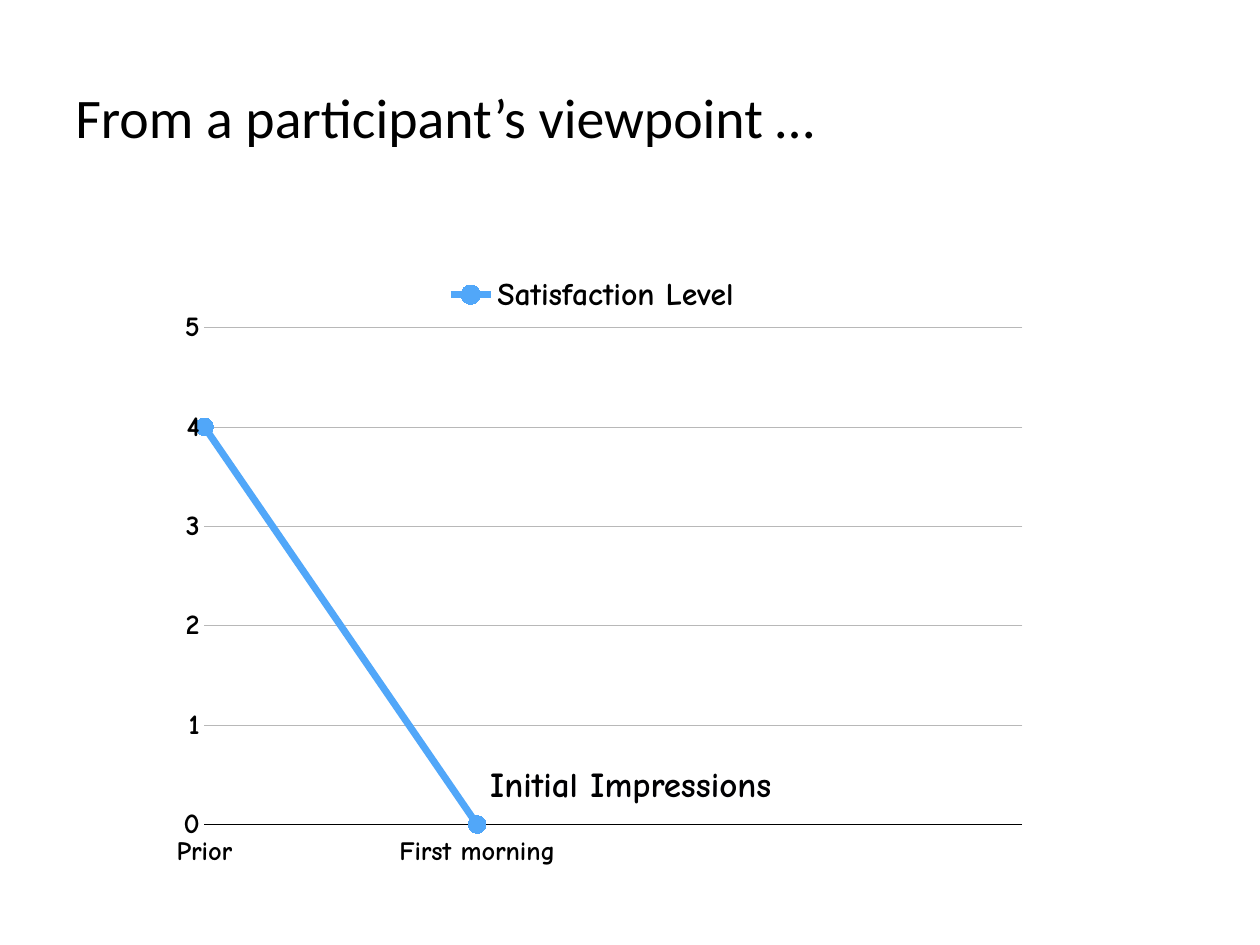
from dataclasses import dataclass

from lxml import etree
from pptx import Presentation
from pptx.chart.data import CategoryChartData
from pptx.dml.color import RGBColor
from pptx.enum.chart import (XL_CHART_TYPE, XL_LEGEND_POSITION, XL_MARKER_STYLE,
                             XL_TICK_LABEL_POSITION, XL_TICK_MARK)
from pptx.enum.text import MSO_ANCHOR
from pptx.oxml.ns import qn
from pptx.util import Inches, Pt


@dataclass
class Theme:
    ink = RGBColor(0, 0, 0)
    note = RGBColor(0, 0, 2)
    line = RGBColor(0x51, 0xA7, 0xF9)
    dot = RGBColor(255, 255, 255)
    grid = RGBColor(0xB8, 0xB8, 0xB8)
    head = "Calibri"
    hand = "Comic Neue"
    base_size = 10
    title_size = 31.9
    note_size = 20
    cat_size = 15.1
    val_size = 16.1
    key_size = 18.1


theme = Theme()


def style(font, size, name=theme.hand, color=theme.ink, bold=True):
    font.size, font.name, font.bold = Pt(size), name, bold
    font.color.rgb = color


def add_text(text, box, inset=None, **form):
    frame = slide.shapes.add_textbox(*map(Inches, box)).text_frame
    frame.word_wrap = True
    frame.vertical_anchor = MSO_ANCHOR.MIDDLE
    if inset is not None:
        frame.margin_left = frame.margin_right = Inches(inset)
        frame.margin_top = frame.margin_bottom = Inches(inset)
    run = frame.paragraphs[0].add_run()
    run.text = text
    style(run.font, **form)


deck = Presentation()
deck.slide_width, deck.slide_height = Inches(10), Inches(7.5)
slide = deck.slides.add_slide(deck.slide_layouts[6])

# Title
add_text("From a participant’s viewpoint …", (0.5, 0.3, 6.67, 1.25),
         size=theme.title_size, name=theme.head, bold=False)

# Chart, with two later stages still blank
data = CategoryChartData()
data.categories = ["Prior", "First morning", "", ""]
data.add_series("Satisfaction Level", [4, 0, None, None])
box = map(Inches, (1.25, 2.07, 6.9, 4.95))
chart = slide.shapes.add_chart(XL_CHART_TYPE.LINE_MARKERS, *box, data).chart
chart.has_title = False
style(chart.font, theme.base_size, theme.head, bold=False)

# Legend
chart.has_legend = True
chart.legend.position = XL_LEGEND_POSITION.TOP
chart.legend.include_in_layout = True
style(chart.legend.font, theme.key_size)

# Axes
cat, val = chart.category_axis, chart.value_axis
for axis, size in ((cat, theme.cat_size), (val, theme.val_size)):
    axis.major_tick_mark = axis.minor_tick_mark = XL_TICK_MARK.NONE
    style(axis.tick_labels.font, size)
cat.tick_label_position = XL_TICK_LABEL_POSITION.LOW
cat.format.line.color.rgb = theme.ink
cat.format.line.width = Pt(1)
val.minimum_scale, val.maximum_scale, val.major_unit = 0, 5, 1
val.format.line.fill.background()
val.has_major_gridlines = True
val.major_gridlines.format.line.color.rgb = theme.grid
val.major_gridlines.format.line.width = Pt(0.25)

# Line and markers
level = chart.plots[0].series[0]
level.smooth = False
level.format.line.color.rgb = theme.line
level.format.line.width = Pt(4)
level.marker.style = XL_MARKER_STYLE.CIRCLE
level.marker.size = 10
level.marker.format.fill.solid()
level.marker.format.fill.fore_color.rgb = theme.dot
level.marker.format.line.color.rgb = theme.line

# First point on the value axis
area = chart.plots[0]._element.getparent()
cross = etree.Element(qn("c:crossBetween"))
cross.set("val", "midCat")
area.find(qn("c:valAx")).find(qn("c:crosses")).addnext(cross)

# Fixed plot area
for old in area.findall(qn("c:layout")):
    area.remove(old)
layout = etree.Element(qn("c:layout"))
area.insert(0, layout)
manual = etree.SubElement(layout, qn("c:manualLayout"))
for tag, value in (("layoutTarget", "inner"), ("xMode", "edge"), ("yMode", "edge"),
                   ("x", "0.054"), ("y", "0.107"), ("w", "0.941"), ("h", "0.797")):
    etree.SubElement(manual, qn("c:" + tag)).set("val", value)

# Note beside the low point
add_text("Initial Impressions", (3.84, 5.97, 2.62, 0.49), inset=0.05,
         size=theme.note_size, color=theme.note)

deck.save("out.pptx")
